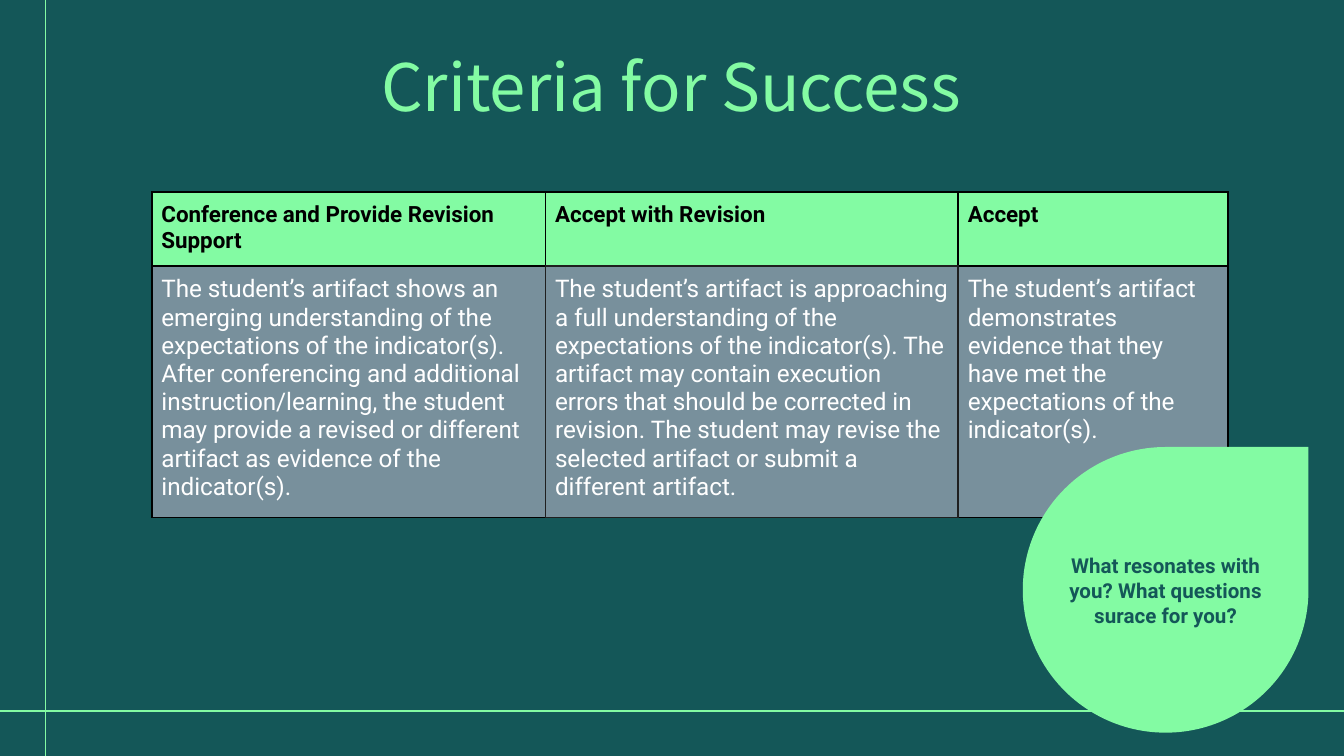
"""Build the Criteria for Success slide."""
import pptx
import pptx.util
import pptx.dml.color
import pptx.enum.shapes
import pptx.enum.text
import pptx.oxml
import pptx.oxml.ns

Cm, Pt = pptx.util.Cm, pptx.util.Pt
RGB = pptx.dml.color.RGBColor
DARK = RGB(0x14, 0x57, 0x58)
MINT = RGB(0x83, 0xFB, 0xA3)
SLATE = RGB(0x78, 0x90, 0x9C)
BLACK = RGB(0, 0, 0)
WHITE = RGB(0xFF, 0xFF, 0xFF)
GREY = RGB(0x1F, 0x1F, 0x1F)
WIDE, HIGH = Cm(25.4), Cm(14.29)
FONT = "Roboto"
CENTER = pptx.enum.text.PP_ALIGN.CENTER
HEADS = ["Conference and Provide Revision Support", "Accept with Revision", "Accept"]
BODY = [
    "The student’s artifact shows an emerging understanding of the expectations "
    "of the indicator(s). After conferencing and additional instruction/learning, "
    "the student may provide a revised or different artifact as evidence of the "
    "indicator(s).",
    "The student’s artifact is approaching a full understanding of the expectations "
    "of the indicator(s). The artifact may contain execution errors that should be "
    "corrected in revision. The student may revise the selected artifact or submit "
    "a different artifact.",
    "The student’s artifact demonstrates evidence that they have met the "
    "expectations of the indicator(s).",
]


def write(para, text, size, color, bold=False, font=FONT):
    """Add one styled run to a paragraph."""
    run = para.add_run()
    run.text = text
    run.font.name = font
    run.font.size = Pt(size)
    run.font.bold = bold
    run.font.color.rgb = color
    return run


def paint(item, color):
    """Fill an item with a plain colour."""
    item.fill.solid()
    item.fill.fore_color.rgb = color


def frame(shape):
    """Prepare a wrapped text frame without insets and centre its paragraph."""
    text = shape.text_frame
    text.word_wrap = True
    text.auto_size = pptx.enum.text.MSO_AUTO_SIZE.NONE
    text.vertical_anchor = pptx.enum.text.MSO_ANCHOR.TOP
    text.margin_left = text.margin_right = text.margin_top = text.margin_bottom = 0
    para = text.paragraphs[0]
    para.alignment = CENTER
    return para


def rule(slide, *ends):
    """Draw a thin mint line."""
    line = slide.shapes.add_connector(pptx.enum.shapes.MSO_CONNECTOR.STRAIGHT, *ends)
    line.line.color.rgb = MINT
    line.line.width = Pt(0.75)
    pptx.oxml.ns.qn("a:effectLst")
    props = line._element.spPr
    props.append(pptx.oxml.parse_xml(
        f'<a:effectLst {pptx.oxml.ns.nsdecls("a")}/>'))


def title(slide, text):
    """Place and fill the title."""
    shape = slide.shapes.title
    shape.left, shape.top, shape.width, shape.height = Cm(4.47), Cm(1.04), Cm(16.43), Cm(1.5)
    para = frame(shape)
    para.line_spacing = 0.9
    para.space_before = Pt(0)
    run = write(para, text, 35, MINT, font="Noto Sans CJK KR")
    face = pptx.oxml.parse_xml(
        f'<a:ea {pptx.oxml.ns.nsdecls("a")} typeface="Noto Sans CJK KR"/>')
    run.font._element.append(face)


def border(cell, sides):
    """Draw the four cell borders in left, right, top, bottom order."""
    props = cell._tc.get_or_add_tcPr()
    for spot, (side, color) in enumerate(zip("LRTB", sides)):
        props.insert(spot, pptx.oxml.parse_xml(
            f'<a:ln{side} {pptx.oxml.ns.nsdecls("a")} w="12700"><a:solidFill>'
            f'<a:srgbClr val="{color}"/></a:solidFill></a:ln{side}>'))


def grid(slide):
    """Add the criteria table."""
    cols, rows = [Cm(7.44), Cm(7.8), Cm(5.1)], [Cm(1.4), Cm(4.75)]
    table = slide.shapes.add_table(
        2, 3, Cm(2.87), Cm(3.63), sum(cols), sum(rows)).table
    for col, width in zip(table.columns, cols):
        col.width = width
    for row, height in zip(table.rows, rows):
        row.height = height
    looks = [(HEADS, 12, BLACK, True, MINT), (BODY, 13, WHITE, False, SLATE)]
    edges = {
        (0, 1): [BLACK, BLACK, BLACK, GREY],
        (1, 0): [BLACK, GREY, BLACK, BLACK],
        (1, 1): [GREY] * 4,
        (1, 2): [GREY, BLACK, BLACK, BLACK],
    }
    for r, (words, size, color, bold, fill) in enumerate(looks):
        for c, text in enumerate(words):
            cell = table.cell(r, c)
            cell.margin_left = cell.margin_right = Cm(0.18)
            cell.margin_top = cell.margin_bottom = Cm(0.18)
            write(cell.text_frame.paragraphs[0], text, size, color, bold)
            paint(cell, fill)
            border(cell, edges.get((r, c), [BLACK] * 4))


def drop(slide):
    """Add the mint teardrop."""
    shape = slide.shapes.add_shape(
        pptx.enum.shapes.MSO_SHAPE.TEAR, Cm(19.33), Cm(8.45), Cm(5.4), Cm(5.4))
    shape.shadow.inherit = False
    paint(shape, MINT)
    shape.line.fill.background()


def prompt(slide, text):
    """Add the question over the teardrop."""
    box = slide.shapes.add_textbox(Cm(19.86), Cm(10.46), Cm(4.34), Cm(1.42))
    write(frame(box), text, 11, DARK, True)


def main():
    """Build and save the deck."""
    deck = pptx.Presentation()
    deck.slide_width, deck.slide_height = WIDE, HIGH
    slide = deck.slides.add_slide(deck.slide_layouts[5])
    paint(slide.background, DARK)
    rule(slide, Cm(0.86), 0, Cm(0.86), HIGH)
    rule(slide, 0, Cm(13.44), WIDE, Cm(13.44))
    title(slide, "Criteria for Success")
    grid(slide)
    drop(slide)
    prompt(slide, "What resonates with you? What questions surace for you?")
    deck.save("out.pptx")


if __name__ == "__main__":
    main()
